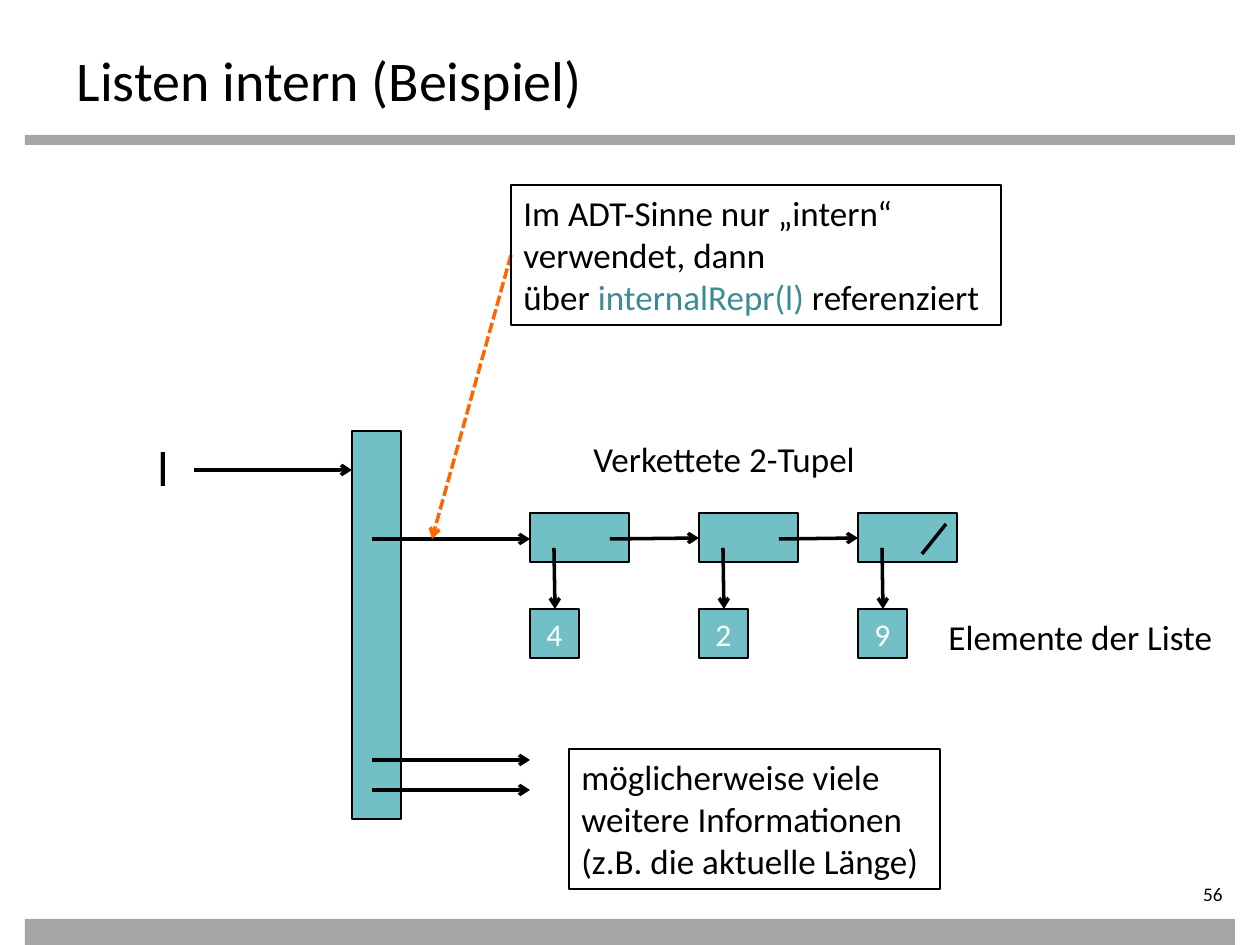
import pptx
import pptx.util
import pptx.dml.color
import pptx.enum.dml
import pptx.enum.shapes
import pptx.enum.text
import pptx.oxml.ns
import lxml.etree

PX = 914400 / 126
FONT = "Calibri"
COLORS = {"black": "000000", "white": "FFFFFF", "gray": "A6A6A6",
          "teal": "72BFC5", "code": "3C8C93", "orange": "FF6600"}

TITLE = "Listen intern (Beispiel)"
PAGE_NUMBER = "56"
BARS = [(25, 135, 1210, 10), (25, 919, 1210, 26)]
RECORD = (352, 431, 49, 388)
NODES = [(530, "4"), (699, "2"), (858, "9")]
NODE_TOP, NODE_WIDTH, CELL = 513, 99, 49
ELEMENT_TOP = 609
ARROW_START, ARROW_END = 372, 530
FIELD_ROWS = [539, 760, 790]
LABELS = [
    ((145, 431, 37, 72), 28, [[("l", "black")]], False),
    ((581, 431, 299, 55), 20, [[("Verkettete 2-Tupel", "black")]], False),
    ((936, 609, 297, 55), 20, [[("Elemente der Liste", "black")]], False),
    ((511, 185, 490, 140), 20,
     [[("Im ADT-Sinne nur „intern“", "black")],
      [("verwendet, dann", "black")],
      [("über ", "black"), ("internalRepr(l)", "code"), (" referenziert", "black")]], True),
    ((569, 749, 371, 140), 20,
     [[("möglicherweise viele\vweitere Informationen\v(z.B. die aktuelle Länge)", "black")]], True),
]


def px(value):
    return pptx.util.Emu(round(value * PX))


def rgb(name):
    return pptx.dml.color.RGBColor.from_string(COLORS[name])


def format_font(font, size, color):
    font.name = FONT
    font.size = pptx.util.Pt(size)
    font.color.rgb = rgb(color)


def outline(shape):
    shape.line.color.rgb = rgb("black")
    shape.line.width = pptx.util.Pt(0.75)


def add_box(slide, box, fill="teal", outlined=True):
    shape = slide.shapes.add_shape(pptx.enum.shapes.MSO_SHAPE.RECTANGLE, *map(px, box))
    shape.shadow.inherit = False
    shape.fill.solid()
    shape.fill.fore_color.rgb = rgb(fill)
    if outlined:
        outline(shape)
    else:
        shape.line.fill.background()
    return shape


def add_line(slide, start, end, color="black", arrow=True, dashed=False):
    connector = slide.shapes.add_connector(
        pptx.enum.shapes.MSO_CONNECTOR.STRAIGHT, *map(px, start + end))
    connector.line.color.rgb = rgb(color)
    connector.line.width = pptx.util.Pt(2)
    if dashed:
        connector.line.dash_style = pptx.enum.dml.MSO_LINE.SQUARE_DOT
    if arrow:
        line = connector.line._get_or_add_ln()
        lxml.etree.SubElement(line, pptx.oxml.ns.qn("a:tailEnd"), type="arrow")
    properties = connector._element.spPr
    lxml.etree.SubElement(properties, pptx.oxml.ns.qn("a:effectLst"))


def add_label(slide, box, size, paragraphs, outlined):
    shape = slide.shapes.add_textbox(*map(px, box))
    frame = shape.text_frame
    frame.word_wrap = False
    frame.auto_size = pptx.enum.text.MSO_AUTO_SIZE.SHAPE_TO_FIT_TEXT
    if outlined:
        outline(shape)
    for index, runs in enumerate(paragraphs):
        paragraph = frame.add_paragraph() if index else frame.paragraphs[0]
        if len(runs) == 1:
            text, color = runs[0]
            paragraph.text = text
            format_font(paragraph.font, size, color)
            continue
        for text, color in runs:
            run = paragraph.add_run()
            run.text = text
            format_font(run.font, size, color)


def add_title(slide):
    title = slide.shapes.title
    title.left, title.top, title.width, title.height = map(px, (64, 35, 1134, 70))
    frame = title.text_frame
    frame.text = TITLE
    frame.margin_top = px(10)
    frame.vertical_anchor = pptx.enum.text.MSO_ANCHOR.TOP
    frame.auto_size = pptx.enum.text.MSO_AUTO_SIZE.NONE
    paragraph = frame.paragraphs[0]
    paragraph.alignment = pptx.enum.text.PP_ALIGN.LEFT
    format_font(paragraph.font, 32, "black")


def add_page_number(slide):
    frame = slide.shapes.add_textbox(*map(px, (1096, 882, 139, 28))).text_frame
    frame.word_wrap = True
    frame.margin_left = frame.margin_top = frame.margin_bottom = 0
    paragraph = frame.paragraphs[0]
    paragraph.text = PAGE_NUMBER
    paragraph.alignment = pptx.enum.text.PP_ALIGN.RIGHT
    format_font(paragraph.font, 11, "black")


def add_nodes(slide):
    for left, value in NODES:
        add_box(slide, (left, NODE_TOP, NODE_WIDTH, CELL))
        frame = add_box(slide, (left, ELEMENT_TOP, CELL, CELL)).text_frame
        frame.vertical_anchor = pptx.enum.text.MSO_ANCHOR.MIDDLE
        paragraph = frame.paragraphs[0]
        paragraph.text = value
        paragraph.alignment = pptx.enum.text.PP_ALIGN.CENTER
        format_font(paragraph.font, 18, "white")
        add_line(slide, (left + 24, 548), (left + 25, ELEMENT_TOP))
    for (left, _), (following, _) in zip(NODES, NODES[1:]):
        add_line(slide, (left + 80, 539), (following, 538))
    last = NODES[-1][0]
    add_line(slide, (last + 88, 524), (last + 64, 554), arrow=False)


def main():
    presentation = pptx.Presentation()
    presentation.slide_width, presentation.slide_height = px(1260), px(945)
    slide = presentation.slides.add_slide(presentation.slide_layouts[5])
    for bar in BARS:
        add_box(slide, bar, "gray", outlined=False)
    add_title(slide)
    add_page_number(slide)
    add_box(slide, RECORD)
    add_nodes(slide)
    add_line(slide, (194, 470), (RECORD[0], 470))
    for row in FIELD_ROWS:
        add_line(slide, (ARROW_START, row), (ARROW_END, row))
    add_line(slide, (511, 255), (432, 539), "orange", dashed=True)
    for label in LABELS:
        add_label(slide, *label)
    presentation.save("out.pptx")


if __name__ == "__main__":
    main()
